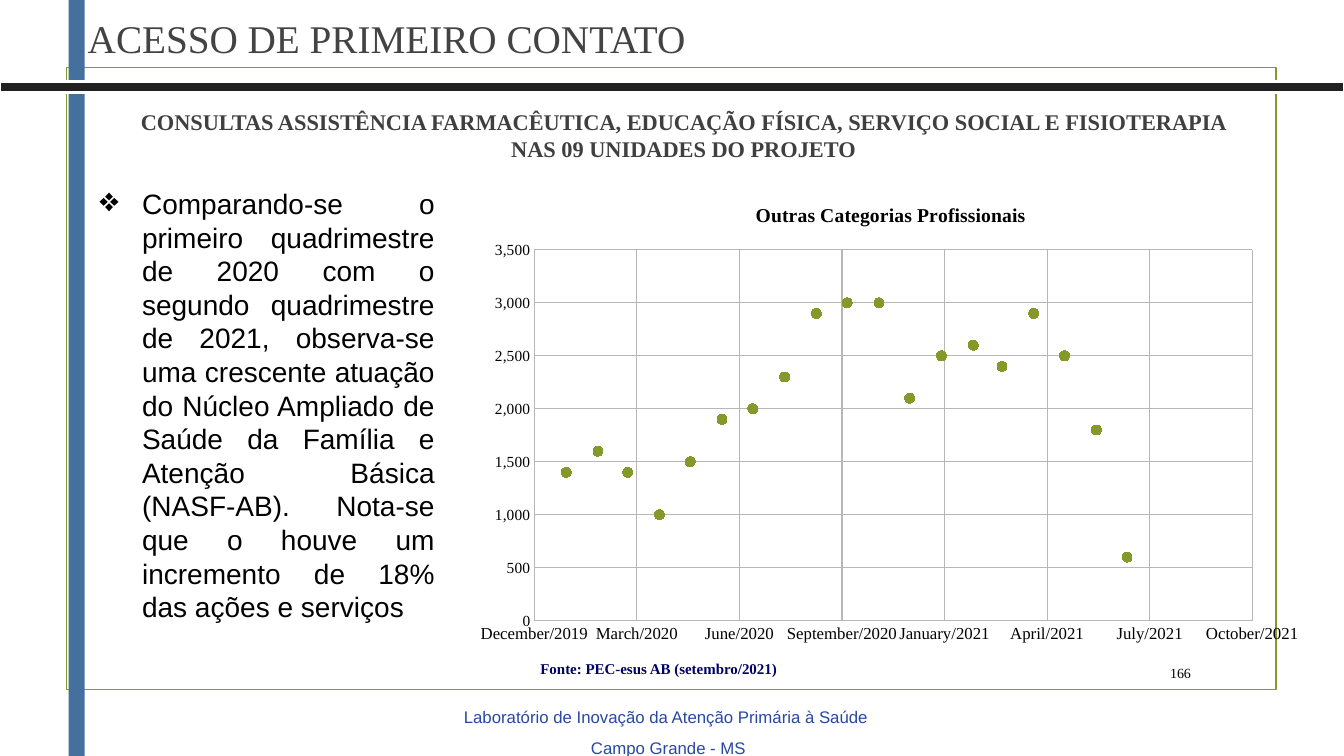
from dataclasses import dataclass
from itertools import accumulate

from lxml import etree
from pptx import Presentation
from pptx.chart.data import XyChartData
from pptx.dml.color import RGBColor
from pptx.enum.chart import XL_CHART_TYPE, XL_MARKER_STYLE, XL_TICK_MARK
from pptx.enum.shapes import MSO_SHAPE
from pptx.enum.text import MSO_ANCHOR, PP_ALIGN
from pptx.oxml.ns import qn
from pptx.util import Inches, Pt

SCATTER = XL_CHART_TYPE.XY_SCATTER
CIRCLE = XL_MARKER_STYLE.CIRCLE
NO_TICK = XL_TICK_MARK.NONE
RECT = MSO_SHAPE.RECTANGLE
TOP, MIDDLE = MSO_ANCHOR.TOP, MSO_ANCHOR.MIDDLE
LEFT, CENTER, RIGHT, JUSTIFY = (
    PP_ALIGN.LEFT, PP_ALIGN.CENTER, PP_ALIGN.RIGHT, PP_ALIGN.JUSTIFY)


@dataclass(frozen=True)
class Theme:
    serif: str = "Times New Roman"
    sans: str = "Arial"
    green: str = "83992A"
    blue: str = "44709D"
    bar: str = "212121"
    white: str = "FFFFFF"
    black: str = "000000"
    title: str = "434343"
    heading: str = "3F3F3F"
    footer: str = "2749A4"
    source: str = "000066"
    grid: str = "B7B7B7"
    title_pt: float = 28
    body_pt: float = 20
    heading_pt: float = 16
    chart_title_pt: float = 14
    small_pt: float = 12
    value_pt: float = 11
    source_pt: float = 10.7
    page_pt: float = 10


T = Theme()
Box = tuple[float, float, float, float]


@dataclass(frozen=True)
class Block:
    box: Box
    fill: str | None = None
    line: str | None = None
    line_pt: float = 1


@dataclass(frozen=True)
class Label:
    box: Box
    lines: tuple[str, ...]
    size: float
    color: str
    font: str = T.serif
    bold: bool = False
    align: PP_ALIGN = LEFT
    anchor: MSO_ANCHOR = TOP
    insets: tuple[float, float] = (0.1, 0.05)
    leading: float | None = None
    indent: float = 0
    bullet: str | None = None


BLOCKS = (
    Block((0.66, 0.67, 12, 6.17), line=T.green, line_pt=1.25),
    Block((0.68, 0, 0.16, 7.5), fill=T.blue),
    Block((0, 0.81, 13.33, 0.11), fill=T.bar, line=T.white, line_pt=2),
)

LABELS = (
    Label((0.74, 0, 12.59, 0.75), ("ACESSO DE PRIMEIRO CONTATO",),
          T.title_pt, T.title, anchor=MIDDLE, insets=(0.13, 0.1)),
    Label((0.89, 1, 11.56, 0.65),
          ("CONSULTAS ASSISTÊNCIA FARMACÊUTICA, EDUCAÇÃO FÍSICA, SERVIÇO SOCIAL "
           "E FISIOTERAPIA NAS 09 UNIDADES DO PROJETO",),
          T.heading_pt, T.heading, bold=True, align=CENTER, insets=(0.13, 0.07),
          leading=19.3, indent=0.22),
    Label((0.89, 1.8, 3.52, 4.48),
          ("Comparando-se o primeiro quadrimestre de 2020 com o segundo "
           "quadrimestre de 2021, observa-se uma crescente atuação do Núcleo "
           "Ampliado de Saúde da Família e Atenção Básica (NASF-AB). Nota-se que "
           "o houve um incremento de 18% das ações e serviços",),
          T.body_pt, T.black, T.sans, align=JUSTIFY, leading=24, indent=0.42,
          bullet="❖"),
    Label((5.35, 6.53, 2.64, 0.19), ("Fonte: PEC-esus AB (setembro/2021)",),
          T.source_pt, T.source, bold=True, insets=(0, 0.01), indent=0.01),
    Label((11.32, 6.52, 0.59, 0.31), ("166",), T.page_pt, T.black,
          align=RIGHT, anchor=MIDDLE),
    Label((3.3, 6.88, 6.66, 0.67),
          ("Laboratório de Inovação da Atenção Primária à Saúde ",
           "Campo Grande - MS"),
          T.small_pt, T.footer, T.sans, align=CENTER, anchor=MIDDLE,
          insets=(0.07, 0.03), leading=22),
)

CHART_BOX = (4.61, 1.83, 8.45, 4.65)
PLOT_BOX = (5.3, 2.48, 7.12, 3.68)
JAN_2020 = 43831  # date serial
DAYS_2020 = (31, 29, 31, 30, 31, 30, 31, 31, 30, 31, 30, 31)
DAYS_2021 = (31, 28, 31, 30, 31, 30)
MONTHS = accumulate(DAYS_2020 + DAYS_2021, initial=JAN_2020)
VISITS = (1400, 1600, 1400, 1000, 1500, 1900, 2000, 2300, 2900, 3000,
          3000, 2100, 2500, 2600, 2400, 2900, 2500, 1800, 600)


def rgb(color: str) -> RGBColor:
    return RGBColor.from_string(color)


def inches(box: Box) -> list[Inches]:
    return [Inches(v) for v in box]


def set_font(font, size: float, color: str, name: str, bold: bool = False) -> None:
    font.size, font.name, font.bold = Pt(size), name, bold
    font.color.rgb = rgb(color)


def draw_block(s, block: Block) -> None:
    sp = s.shapes.add_shape(RECT, *inches(block.box))
    sp.shadow.inherit = False
    if block.fill:
        sp.fill.solid()
        sp.fill.fore_color.rgb = rgb(block.fill)
    else:
        sp.fill.background()
    if block.line:
        sp.line.color.rgb = rgb(block.line)
        sp.line.width = Pt(block.line_pt)
    else:
        sp.line.fill.background()


def draw_label(s, label: Label) -> None:
    tf = s.shapes.add_textbox(*inches(label.box)).text_frame
    tf.word_wrap = True
    tf.vertical_anchor = label.anchor
    tf.margin_left = tf.margin_right = Inches(label.insets[0])
    tf.margin_top = tf.margin_bottom = Inches(label.insets[1])
    for i, line in enumerate(label.lines):
        p = tf.add_paragraph() if i else tf.paragraphs[0]
        p.alignment = label.align
        if label.leading:
            p.line_spacing = Pt(label.leading)
        pPr = p._p.get_or_add_pPr()
        pPr.set("marL", str(Inches(label.indent)))
        if label.bullet:
            pPr.set("indent", str(-Inches(label.indent)))
            etree.SubElement(pPr, qn("a:buSzPct"), val="120000")
            etree.SubElement(pPr, qn("a:buChar"), char=label.bullet)
        r = p.add_run()
        r.text = line
        set_font(r.font, label.size, label.color, label.font, label.bold)


def style_axis(axis, low: int, high: int, step: int, size: float, fmt: str) -> None:
    axis.minimum_scale, axis.maximum_scale, axis.major_unit = low, high, step
    axis.major_tick_mark = axis.minor_tick_mark = NO_TICK
    axis.has_major_gridlines = True
    for line in (axis.major_gridlines.format.line, axis.format.line):
        line.color.rgb = rgb(T.grid)
        line.width = Pt(0.75)
    axis.tick_labels.number_format = fmt
    axis.tick_labels.number_format_is_linked = False
    set_font(axis.tick_labels.font, size, T.black, T.serif)


def fix_plot_area(chart) -> None:
    """Pin the inner plot area to PLOT_BOX, as fractions of the chart frame."""
    left, top, width, height = CHART_BOX
    x, y, w, h = PLOT_BOX
    fractions = {"x": (x - left) / width, "y": (y - top) / height,
                 "w": w / width, "h": h / height}
    area = chart._chartSpace.chart.plotArea
    for old in area.findall(qn("c:layout")):
        area.remove(old)
    layout = etree.Element(qn("c:layout"))
    manual = etree.SubElement(layout, qn("c:manualLayout"))
    etree.SubElement(manual, qn("c:layoutTarget"), val="inner")
    for key in ("x", "y"):
        etree.SubElement(manual, qn(f"c:{key}Mode"), val="edge")
    for key, value in fractions.items():
        etree.SubElement(manual, qn(f"c:{key}"), val=f"{value:.4f}")
    area.insert(0, layout)


def draw_chart(s) -> None:
    data = XyChartData()
    points = data.add_series("Series 1")
    for month, visits in zip(MONTHS, VISITS):
        points.add_data_point(month, visits)
    chart = s.shapes.add_chart(SCATTER, *inches(CHART_BOX), data).chart
    set_font(chart.font, T.page_pt, T.black, T.serif)
    chart.has_legend = False
    chart.has_title = True
    r = chart.chart_title.text_frame.paragraphs[0].add_run()
    r.text = "Outras Categorias Profissionais"
    set_font(r.font, T.chart_title_pt, T.black, T.serif, True)
    style_axis(chart.category_axis, 43800, 44500, 100, T.small_pt, "mmmm/yyyy")
    style_axis(chart.value_axis, 0, 3500, 500, T.value_pt, "#,##0")
    chart.plots[0].vary_by_categories = False
    series = chart.plots[0].series[0]
    series.format.line.fill.background()
    marker = series.marker
    marker.style, marker.size = CIRCLE, 7
    marker.format.fill.solid()
    for color in (marker.format.fill.fore_color, marker.format.line.color):
        color.rgb = rgb(T.green)
    fix_plot_area(chart)


def main() -> None:
    prs = Presentation()
    prs.slide_width, prs.slide_height = Inches(13.33), Inches(7.5)
    s = prs.slides.add_slide(prs.slide_layouts[6])
    for block in BLOCKS:
        draw_block(s, block)
    draw_chart(s)
    for label in LABELS:
        draw_label(s, label)
    prs.save("out.pptx")


if __name__ == "__main__":
    main()
